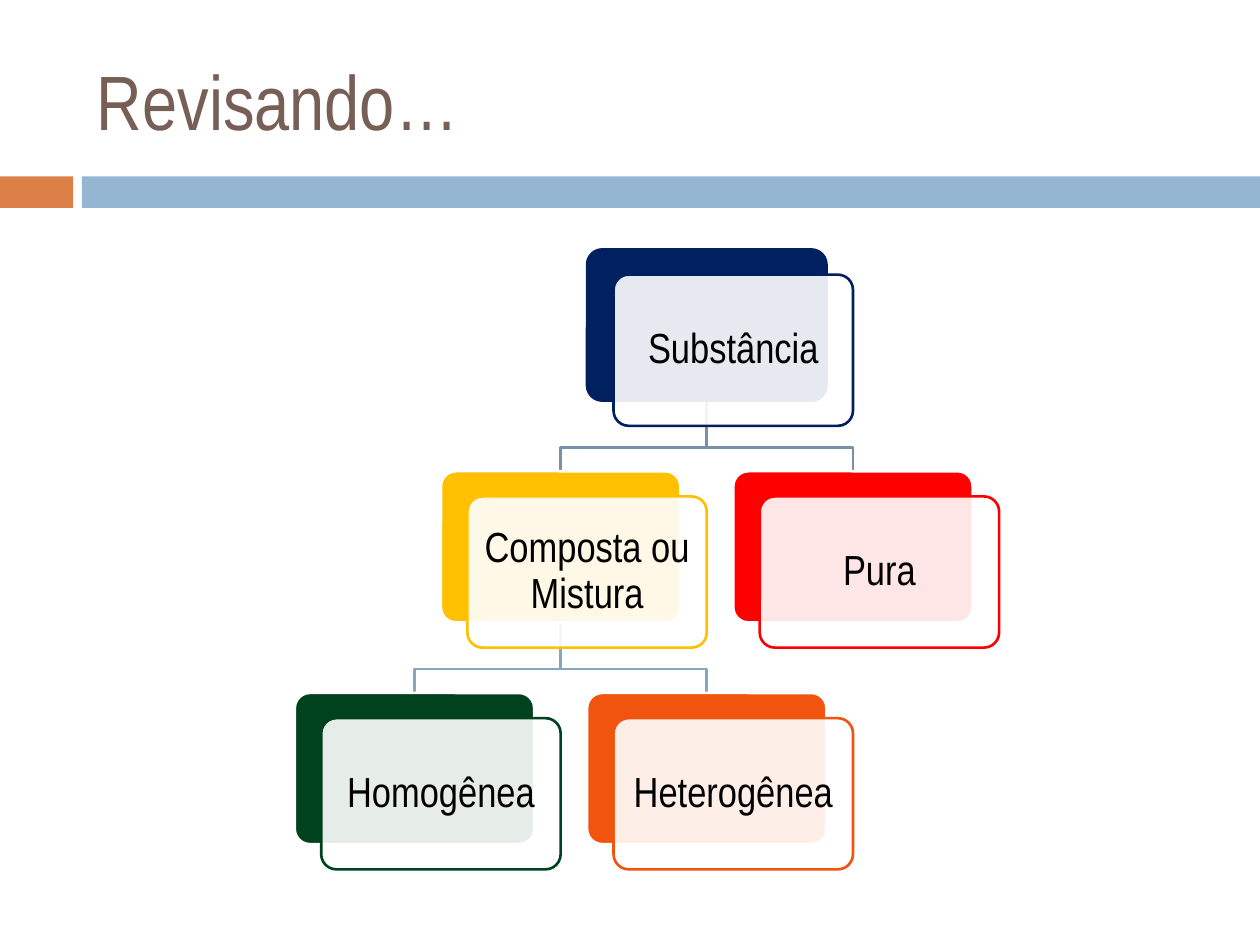
from dataclasses import dataclass

from lxml import etree
from pptx import Presentation
from pptx.dml.color import RGBColor
from pptx.enum.shapes import MSO_SHAPE
from pptx.enum.text import MSO_ANCHOR, PP_ALIGN
from pptx.oxml.ns import qn
from pptx.util import Inches, Pt

RECT, ROUND = MSO_SHAPE.RECTANGLE, MSO_SHAPE.ROUNDED_RECTANGLE
MIDDLE, CENTER, LEFT = MSO_ANCHOR.MIDDLE, PP_ALIGN.CENTER, PP_ALIGN.LEFT


@dataclass(frozen=True)
class Theme:
    font: str = "Arial Narrow"
    title_size: int = 44
    node_size: int = 24
    line_width: float = 1.5
    title: str = "775F55"
    text: str = "000000"
    white: str = "FFFFFF"
    accent: str = "DD8047"
    band: str = "94B6D2"
    link_top: str = "7792A8"
    link_low: str = "86A5BF"


@dataclass(frozen=True)
class Node:
    label: str
    col: int
    row: int
    color: str
    edge: str = "FFFFFF"

    @property
    def left(self) -> float:
        return TREE_LEFT + self.col * COL_STEP

    @property
    def top(self) -> float:
        return TREE_TOP + self.row * ROW_STEP

    @property
    def center(self) -> float:
        return self.left + NODE_W / 2


THEME = Theme()

# Tree grid, in inches
TREE_LEFT, TREE_TOP = 2.34, 1.98
COL_STEP, ROW_STEP = 1.16, 1.76
NODE_W, NODE_H = 1.9, 1.2
CARD_DX, CARD_DY = 0.21, 0.2
ELBOW_DROP = 0.37

SUBSTANCE = Node("Substância", 2, 0, "002060", "002060")
MIXTURE = Node("Composta ou Mistura", 1, 1, "FFC000")
PURE = Node("Pura", 3, 1, "FF0000")
HOMOGENEOUS = Node("Homogênea", 0, 2, "00421E")
HETEROGENEOUS = Node("Heterogênea", 2, 2, "F0540E")

NODES = [SUBSTANCE, MIXTURE, HOMOGENEOUS, HETEROGENEOUS, PURE]
LINKS = [
    (SUBSTANCE, PURE, THEME.link_top),
    (MIXTURE, HETEROGENEOUS, THEME.link_low),
    (MIXTURE, HOMOGENEOUS, THEME.link_low),
    (SUBSTANCE, MIXTURE, THEME.link_top),
]


def rgb(color: str) -> RGBColor:
    return RGBColor.from_string(color)


def add_box(s, kind, left: float, top: float, width: float, height: float,
            fill: str, line: str | None = None):
    sp = s.shapes.add_shape(kind, Inches(left), Inches(top), Inches(width), Inches(height))
    sp.shadow.inherit = False
    sp.fill.solid()
    sp.fill.fore_color.rgb = rgb(fill)
    if line:
        sp.line.color.rgb = rgb(line)
        sp.line.width = Pt(THEME.line_width)
    else:
        sp.line.fill.background()
    if kind == ROUND:
        sp.adjustments[0] = 0.1
    return sp


def set_alpha(sp, percent: int) -> None:
    color = sp.fill._xPr.find(qn("a:solidFill"))[0]
    etree.SubElement(color, qn("a:alpha"), val=str(percent * 1000))


def write(sp, text: str, size: int, color: str, align):
    tf = sp.text_frame
    tf.word_wrap = True
    tf.vertical_anchor = MIDDLE
    p = tf.paragraphs[0]
    p.alignment = align
    r = p.add_run()
    r.text = text
    r.font.name = THEME.font
    r.font.size = Pt(size)
    r.font.color.rgb = rgb(color)
    return tf


def add_link(s, parent: Node, child: Node, color: str) -> None:
    start = parent.top + NODE_H
    bend = start + ELBOW_DROP
    points = [(parent.center, bend), (child.center, bend), (child.center, child.top)]
    builder = s.shapes.build_freeform(Inches(parent.center), Inches(start))
    builder.add_line_segments([(Inches(x), Inches(y)) for x, y in points], close=False)
    sp = builder.convert_to_shape()
    sp.shadow.inherit = False
    sp.fill.background()
    sp.line.color.rgb = rgb(color)
    sp.line.width = Pt(THEME.line_width)


def add_node(s, node: Node) -> None:
    add_box(s, ROUND, node.left, node.top, NODE_W, NODE_H, node.color, node.edge)
    card = add_box(s, ROUND, node.left + CARD_DX, node.top + CARD_DY,
                   NODE_W, NODE_H, THEME.white, node.color)
    set_alpha(card, 90)
    tf = write(card, node.label, THEME.node_size, THEME.text, CENTER)
    tf.margin_left = tf.margin_right = Inches(0.09)
    tf.margin_top = tf.margin_bottom = Inches(0.1)
    tf.paragraphs[0].line_spacing = 0.9


def main() -> None:
    prs = Presentation()
    prs.slide_width, prs.slide_height = Inches(10), Inches(7.5)
    s = prs.slides.add_slide(prs.slide_layouts[6])

    # Header band and title
    add_box(s, RECT, 0, 1.4, 0.58, 0.25, THEME.accent)
    add_box(s, RECT, 0.65, 1.4, 9.35, 0.25, THEME.band)
    title = s.shapes.add_textbox(Inches(0.67), Inches(0.25), Inches(8.92), Inches(1.08))
    write(title, "Revisando…", THEME.title_size, THEME.title, LEFT)

    # Classification tree: links lie behind the nodes
    for parent, child, color in LINKS:
        add_link(s, parent, child, color)
    for node in NODES:
        add_node(s, node)

    prs.save("out.pptx")


if __name__ == "__main__":
    main()
